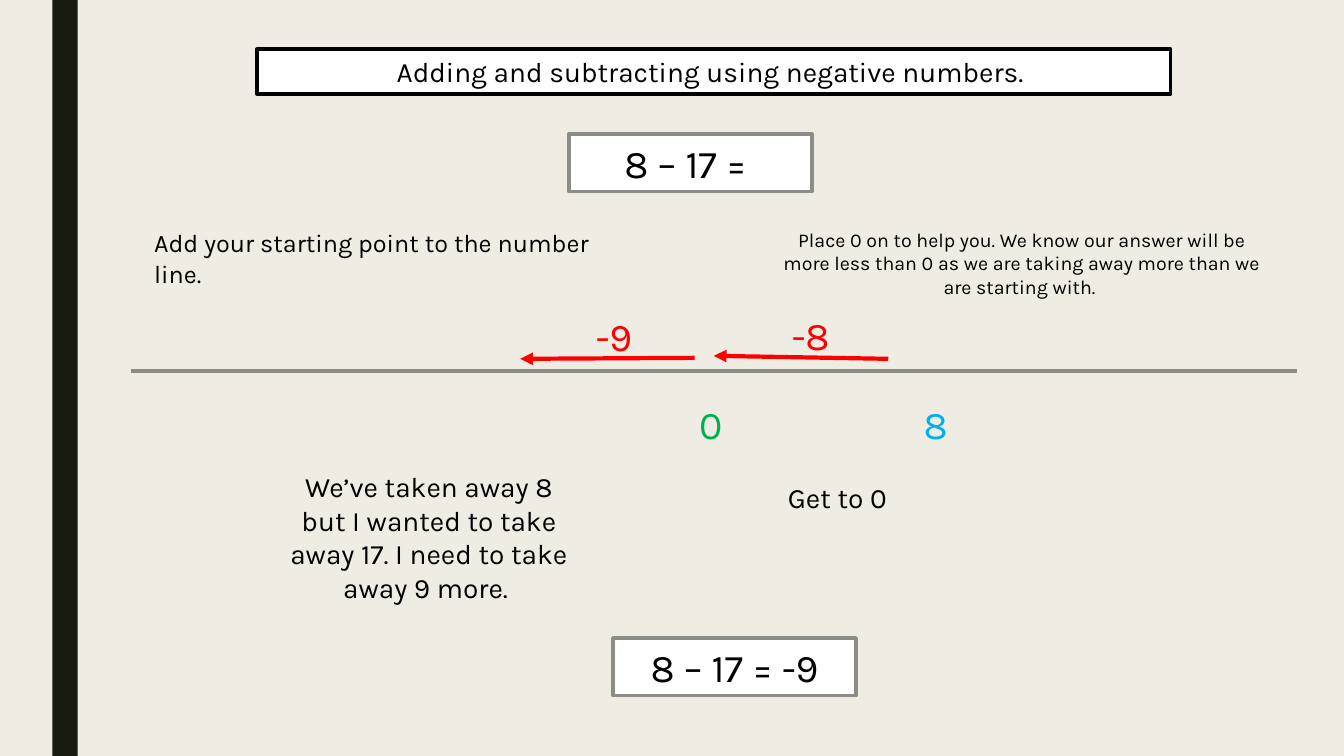
from dataclasses import dataclass

import lxml.etree
import pptx
import pptx.dml.color
import pptx.enum.shapes
import pptx.enum.text
import pptx.oxml.ns
import pptx.slide
import pptx.util

Inches = pptx.util.Inches
Align = pptx.enum.text.PP_ALIGN
Anchor = pptx.enum.text.MSO_ANCHOR

FONT = "Karla"
COLOURS = {
    "background": "EFEDE3",
    "band": "191B0E",
    "white": "FFFFFF",
    "black": "000000",
    "grey": "8C8D86",
    "start": "00B0F0",
    "zero": "00B050",
    "jump": "FF0000",
}


@dataclass
class Label:
    text: str
    left: float
    top: float
    width: float
    height: float
    size: int
    colour: str = "black"
    align: Align = Align.CENTER


@dataclass
class Panel:
    label: Label
    border: str


@dataclass
class Line:
    start: tuple[float, float]
    end: tuple[float, float]
    colour: str
    arrow: bool = False


SUM_SIZE = (2.41, 0.57, 28)
NUMBER_SIZE = (0.88, 0.57, 28)

PANELS = [
    Panel(Label("Adding and subtracting using negative numbers. ", 2.55, 0.49, 9.06, 0.44, 20), "black"),
    Panel(Label("8 – 17 = ", 5.64, 1.33, *SUM_SIZE), "grey"),
    Panel(Label("8 – 17 = -9", 6.08, 6.33, *SUM_SIZE), "grey"),
]

LINES = [
    Line((1.3, 3.68), (12.86, 3.68), "grey"),
    Line((8.81, 3.56), (7.08, 3.53), "jump", arrow=True),
    Line((6.89, 3.55), (5.16, 3.56), "jump", arrow=True),
]

LABELS = [
    Label("Add your starting point to the number line.", 1.43, 2.21, 4.68, 0.4, 18, align=Align.LEFT),
    Label(
        "Place 0 on to help you. We know our answer will be more less than 0 "
        "as we are taking away more than we are starting with. ",
        7.59, 2.21, 5.09, 0.81, 14,
    ),
    Label("8", 8.84, 3.92, *NUMBER_SIZE, "start"),
    Label("0", 6.61, 3.92, *NUMBER_SIZE, "zero"),
    Label("-8", 7.6, 3.04, *NUMBER_SIZE, "jump"),
    Label("-9", 5.65, 3.05, *NUMBER_SIZE, "jump"),
    Label("Get to 0", 7.41, 4.72, 1.79, 0.44, 20),
    Label(
        "We’ve taken away 8 but I wanted to take away 17. I need to take away 9 more. ",
        2.73, 4.61, 3.05, 1.45, 20,
    ),
]


def rgb(name: str) -> pptx.dml.color.RGBColor:
    return pptx.dml.color.RGBColor.from_string(COLOURS[name])


def add_rectangle(slide: pptx.slide.Slide, left: float, top: float, width: float, height: float, fill: str):
    rectangle = slide.shapes.add_shape(
        pptx.enum.shapes.MSO_SHAPE.RECTANGLE, Inches(left), Inches(top), Inches(width), Inches(height)
    )
    rectangle.shadow.inherit = False
    rectangle.fill.solid()
    rectangle.fill.fore_color.rgb = rgb(fill)
    rectangle.line.fill.background()
    return rectangle


def write_label(holder, label: Label, anchor: Anchor) -> None:
    frame = holder.text_frame
    frame.word_wrap = True
    frame.auto_size = pptx.enum.text.MSO_AUTO_SIZE.SHAPE_TO_FIT_TEXT
    frame.vertical_anchor = anchor
    paragraph = frame.paragraphs[0]
    paragraph.alignment = label.align
    run = paragraph.add_run()
    run.text = label.text
    run.font.name = FONT
    run.font.size = pptx.util.Pt(label.size)
    run.font.color.rgb = rgb(label.colour)


def draw_panel(slide: pptx.slide.Slide, panel: Panel) -> None:
    label = panel.label
    box = add_rectangle(slide, label.left, label.top, label.width, label.height, "white")
    box.line.color.rgb = rgb(panel.border)
    box.line.width = pptx.util.Pt(2.75)
    write_label(box, label, Anchor.MIDDLE)


def draw_label(slide: pptx.slide.Slide, label: Label) -> None:
    caption = slide.shapes.add_textbox(
        Inches(label.left), Inches(label.top), Inches(label.width), Inches(label.height)
    )
    write_label(caption, label, Anchor.TOP)


def draw_line(slide: pptx.slide.Slide, line: Line) -> None:
    stroke = slide.shapes.add_connector(
        pptx.enum.shapes.MSO_CONNECTOR.STRAIGHT, *map(Inches, line.start + line.end)
    )
    stroke.line.color.rgb = rgb(line.colour)
    stroke.line.width = pptx.util.Pt(3)
    qn = pptx.oxml.ns.qn
    properties = stroke._element.spPr
    if line.arrow:
        lxml.etree.SubElement(properties.find(qn("a:ln")), qn("a:tailEnd"), type="triangle")
    lxml.etree.SubElement(properties, qn("a:effectLst"))


def main() -> None:
    presentation = pptx.Presentation()
    presentation.slide_width = Inches(13.33)
    presentation.slide_height = Inches(7.5)
    slide = presentation.slides.add_slide(presentation.slide_layouts[6])
    slide.background.fill.solid()
    slide.background.fill.fore_color.rgb = rgb("background")
    add_rectangle(slide, 0.52, 0, 0.25, 7.5, "band")
    for panel in PANELS:
        draw_panel(slide, panel)
    for line in LINES:
        draw_line(slide, line)
    for label in LABELS:
        draw_label(slide, label)
    presentation.save("out.pptx")


if __name__ == "__main__":
    main()
